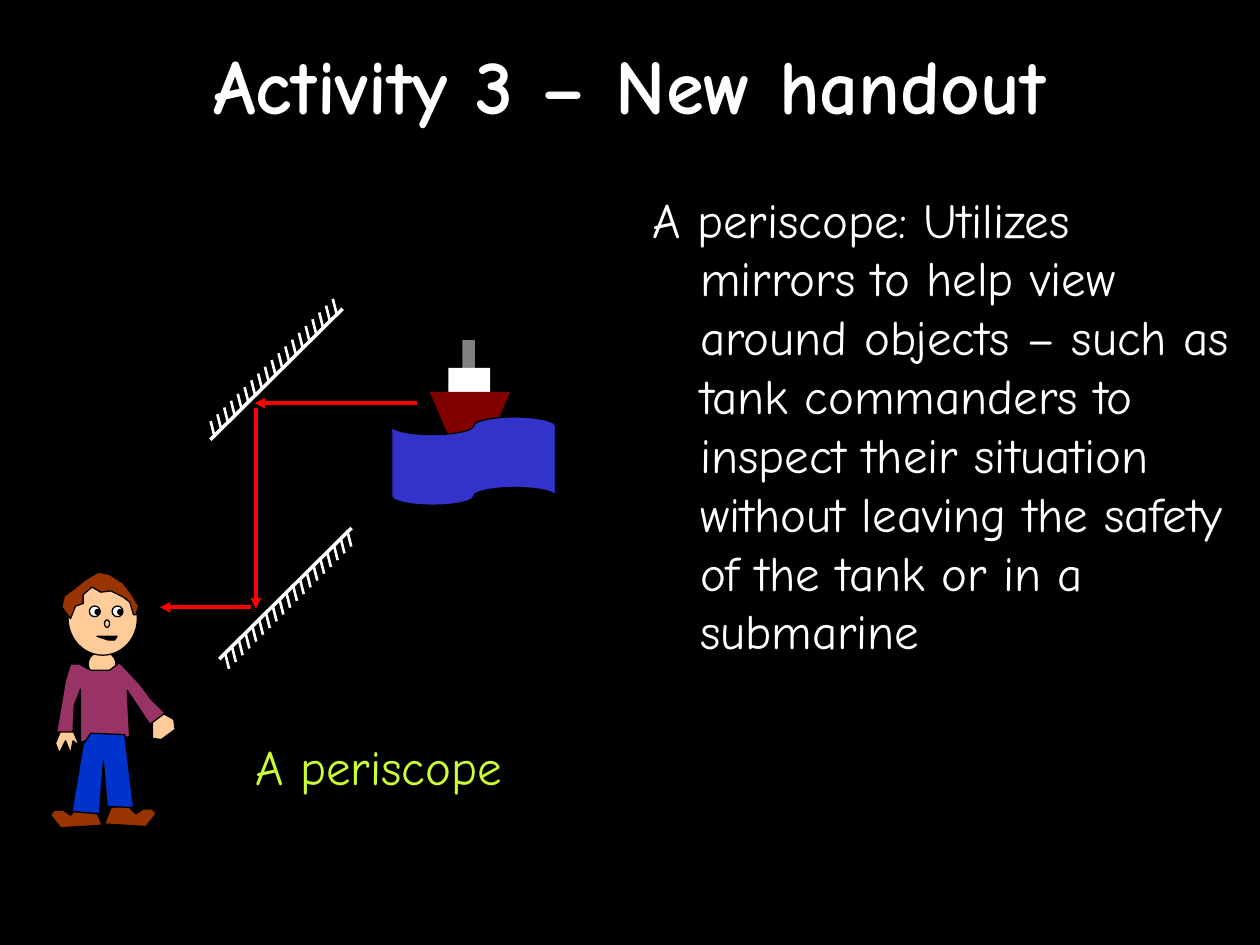
from lxml import etree
from pptx import Presentation
from pptx import util as u
from pptx.dml.color import RGBColor
from pptx.enum import shapes, text
from pptx.oxml.ns import qn

Pt = u.Pt
FONT = "Comic Neue"
COLORS = {
    "black": "000000", "white": "FFFFFF", "lime": "CCFF33", "red": "FF0000",
    "skin": "FFCC99", "brown": "993300", "plum": "993366", "jeans": "0033CC",
    "grey": "808080", "hull": "800000", "sea": "3333CC",
}
TITLE = "Activity 3 – New handout"
BODY = ("A periscope: Utilizes mirrors to help view around objects – such as "
        "tank commanders to inspect their situation without leaving the safety "
        "of the tank or in a submarine")
CAPTION = "A periscope"

MIRRORS = [((125.3, 376.6), 1), ((195.8, 176.4), -1)]
MIRROR_RUN = (75.6, -74.9)
TICK_START, TICK_STEP, TICK_RUN, TICKS = (3.4, -3.1), 3.88, (2.2, 8.7), 19
RAYS = [
    ((238.3, 230.4), (145.4, 230.4)),
    ((146.2, 233.3), (146.2, 347.8)),
    ((143.3, 347), (91.4, 347)),
]

GRID = 0.72
OVAL = shapes.MSO_SHAPE.OVAL
RECT = shapes.MSO_SHAPE.RECTANGLE
TAPE = shapes.MSO_SHAPE.FLOWCHART_PUNCHED_TAPE
SHOE = [(40, 647), (43, 643), (50, 643), (56, 647), (63, 640), (76, 642),
        (81, 655), (48, 657)]
EYES = [
    (OVAL, color, (x + inset, 481 + inset * 0.6, size, size))
    for x in (71, 89) for color, inset, size in (("white", 0, 8.5), ("black", 4.5, 4))
]
PERSON = [
    ("outline", "skin", [(121, 568), (129, 566), (138, 571), (139, 579),
                         (128, 587), (121, 586)]),
    ("outline", "brown", SHOE),
    ("outline", "brown", [(164 - x, y - 1) for x, y in SHOE]),
    ("outline", "skin", [(49, 578), (44, 590), (47, 598), (52, 588), (56, 598),
                         (58, 588), (63, 592), (58, 580)]),
    (OVAL, "skin", (70, 517, 22, 20)),
    (OVAL, "skin", (54, 462, 55, 58)),
    ("outline", "brown", [
        (106, 488), (103, 478), (98, 474), (88, 469), (80, 470), (73, 466),
        (66, 472), (66, 479), (60, 481), (56, 491), (49, 482), (51, 473),
        (58, 468), (68, 460), (78, 454), (87, 456), (98, 463), (104, 471),
        (110, 481), (108, 488)]),
    *EYES,
    (OVAL, "skin", (83, 492, 4, 6)),
    ("outline", "plum", [
        (95, 526), (87, 532), (72, 532), (63, 527), (56, 527), (52, 540),
        (45, 581), (58, 581), (59, 560), (64, 547), (64, 589), (81, 585),
        (103, 585), (101, 548), (119, 575), (131, 566), (120, 555), (111, 543)]),
    ("outline", "black", [(77, 505), (93, 505), (91, 508), (86, 508)]),
    ("outline", "jeans", [(72, 582), (99, 583), (106, 641), (85, 640),
                          (82, 604), (79, 646), (57, 644), (66, 591)]),
]
SHIP = [
    (RECT, "grey", (367, 270, 10, 23)),
    (RECT, "white", (356, 292, 33, 25)),
    ("outline", "hull", [(341, 311), (357, 348), (389, 348), (405, 311)]),
]
SEA = [(TAPE, "sea", (311, 331, 130, 70))]


def rgb(name):
    return RGBColor.from_string(COLORS[name])


def shift(point, run, sign=1):
    return tuple(a + sign * b for a, b in zip(point, run))


def add_line(parent, start, end, color, width, arrow=False):
    ends = [Pt(v) for v in (*start, *end)]
    c = parent.add_connector(shapes.MSO_CONNECTOR.STRAIGHT, *ends)
    c.line.color.rgb = rgb(color)
    c.line.width = Pt(width)
    if arrow:
        ln = c._element.spPr.find(qn("a:ln"))
        etree.SubElement(ln, qn("a:tailEnd"), type="triangle")
    etree.SubElement(c._element.spPr, qn("a:effectLst"))


def draw(parent, parts, outlined):
    for kind, color, coords in parts:
        if kind == "outline":
            builder = parent.build_freeform(*coords[0], scale=Pt(GRID))
            builder.add_line_segments(coords[1:], close=True)
            sp = builder.convert_to_shape()
        else:
            sp = parent.add_shape(kind, *[Pt(v * GRID) for v in coords])
        sp.shadow.inherit = False
        sp.fill.solid()
        sp.fill.fore_color.rgb = rgb(color)
        if outlined:
            sp.line.color.rgb = rgb("black")
            sp.line.width = Pt(0.75)
        else:
            sp.line.fill.background()


def write(sp, words, box, size, color, bold=False):
    sp.left, sp.top, sp.width, sp.height = [Pt(v) for v in box]
    tf = sp.text_frame
    tf.word_wrap = True
    tf.auto_size = text.MSO_AUTO_SIZE.NONE
    p = tf.paragraphs[0]
    p.text = words
    p.space_before = Pt(0)
    p.font.name, p.font.size, p.font.bold = FONT, Pt(size), bold
    p.font.color.rgb = rgb(color)
    return p


def main():
    prs = Presentation()
    prs.slide_width, prs.slide_height = Pt(720), Pt(540)
    s = prs.slides.add_slide(prs.slide_layouts[1])
    s.background.fill.solid()
    s.background.fill.fore_color.rgb = rgb("black")

    p = write(s.shapes.title, TITLE, (30, 18, 660, 60), 44, "white", True)
    p.alignment = text.PP_ALIGN.CENTER
    p = write(s.placeholders[1], BODY, (365.8, 104.4, 347.8, 54.7), 28, "white")
    pPr = p._p.get_or_add_pPr()
    pPr.set("marL", str(Pt(27)))
    pPr.set("indent", str(Pt(-27)))
    pPr.find(qn("a:spcBef")).addnext(etree.Element(qn("a:buNone")))

    for start, sign in MIRRORS:
        mirror = s.shapes.add_group_shape().shapes
        add_line(mirror, start, shift(start, MIRROR_RUN, sign), "white", 2)
        first = shift(start, TICK_START, sign)
        for i in range(TICKS):
            foot = shift(first, (i * TICK_STEP, -i * TICK_STEP), sign)
            add_line(mirror, foot, shift(foot, TICK_RUN, sign), "white", 1.5)

    draw(s.shapes.add_group_shape().shapes, PERSON, True)
    ship = s.shapes.add_group_shape().shapes
    draw(ship, SHIP, False)
    draw(ship, SEA, True)
    for start, end in RAYS:
        add_line(s.shapes, start, end, "red", 2, arrow=True)

    box = (139, 417.6, 226.8, 41)
    caption = s.shapes.add_textbox(*[Pt(v) for v in box])
    write(caption, CAPTION, box, 28, "lime")
    prs.save("out.pptx")


if __name__ == "__main__":
    main()
